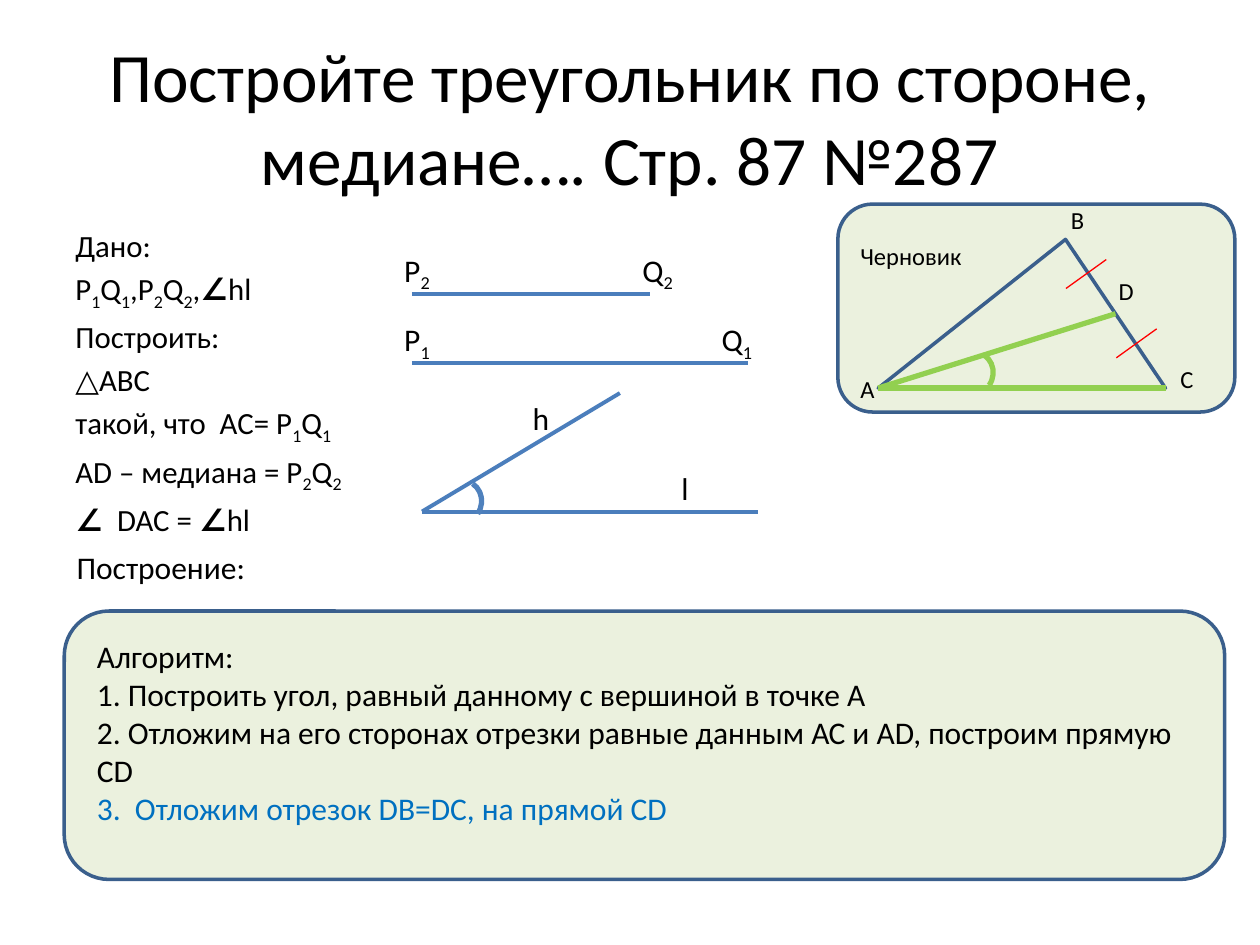
import collections
import itertools

import pptx
import pptx.dml.color
import pptx.enum.shapes
import pptx.enum.text
import pptx.oxml.ns
import pptx.util
from lxml import etree
from pptx.util import Inches

COLORS = {
    "text": "000000",
    "accent": "0070C0",
    "panel": "EBF1DE",
    "outline": "3A5F8C",
    "segment": "4B7EBC",
    "arc": "4F81BD",
    "known": "92D050",
    "tick": "FF0000",
}
SUBSCRIPTS = {"₁": "1", "₂": "2"}
SYMBOLS = "∠△"
SHAPES = pptx.enum.shapes.MSO_SHAPE


class Box(collections.namedtuple("Box", "left top width height")):
    def inner(self, x, y, width, height):
        return Box(self.left + x, self.top + y, width, height)

    def point(self, x, y):
        return self.left + x, self.top + y

    def lengths(self):
        return [Inches(value) for value in self]


def rgb(name):
    return pptx.dml.color.RGBColor.from_string(COLORS[name])


def character_style(character):
    if character in SUBSCRIPTS:
        return "subscript"
    return "bold" if character in SYMBOLS else "plain"


def add_text(slide, box, text, size=18, color="text", second_color="accent",
             align="LEFT", anchor="TOP", spacing=0, wrap=True):
    frame = slide.shapes.add_textbox(*box.lengths()).text_frame
    frame.word_wrap = wrap
    frame.vertical_anchor = pptx.enum.text.MSO_ANCHOR[anchor]
    lines = [text] if isinstance(text, str) else text
    for index, line in enumerate(lines):
        paragraph = frame.add_paragraph() if index else frame.paragraphs[0]
        paragraph.alignment = pptx.enum.text.PP_ALIGN[align]
        paragraph.space_before = pptx.util.Pt(size * spacing)
        for position, row in enumerate(line.split("\n")):
            if position:
                paragraph.add_line_break()
            for style, characters in itertools.groupby(row, character_style):
                run = paragraph.add_run()
                run.text = "".join(SUBSCRIPTS.get(c, c) for c in characters)
                run.font.name = "Calibri"
                run.font.size = pptx.util.Pt(size)
                run.font.color.rgb = rgb(second_color if position else color)
                run.font.bold = style == "bold"
                if style == "subscript":
                    run.font._element.set("baseline", "-25000")


def add_outline(slide, kind, box, line, weight, fill=None, rotation=0):
    shape = slide.shapes.add_shape(kind, *box.lengths())
    shape.shadow.inherit = False
    shape.rotation = rotation
    shape.line.color.rgb = rgb(line)
    shape.line.width = pptx.util.Pt(weight)
    if fill:
        shape.fill.solid()
        shape.fill.fore_color.rgb = rgb(fill)
    else:
        shape.fill.background()
    return shape


def add_panel(slide, box):
    add_outline(slide, SHAPES.ROUNDED_RECTANGLE, box, "outline", 2, fill="panel")


def add_angle_arc(slide, box, color):
    add_outline(slide, SHAPES.ARC, box, color, 3, rotation=34.1)


def add_line(slide, start, end, color, weight):
    connector = slide.shapes.add_connector(
        pptx.enum.shapes.MSO_CONNECTOR.STRAIGHT,
        *[Inches(value) for value in start + end])
    connector.line.color.rgb = rgb(color)
    connector.line.width = pptx.util.Pt(weight)
    etree.SubElement(connector._element.spPr, pptx.oxml.ns.qn("a:effectLst"))


def build_title(slide, box):
    add_text(slide, box, "Постройте треугольник по стороне, медиане…. Стр. 87 №287",
             size=39.6, align="CENTER", anchor="MIDDLE")


def build_given(slide, box):
    add_text(slide, box, [
        "Дано:",
        "P₁Q₁,P₂Q₂,∠hl",
        "Построить:",
        "△ABC",
        "такой, что  AC= P₁Q₁",
        "AD – медиана = P₂Q₂",
        "∠  DAC = ∠hl",
    ], size=17.6, spacing=0.2)
    add_text(slide, box.inner(0.01, 2.55, 2.44, 0.4), "Построение:")


def build_draft(slide, box):
    add_panel(slide, box)
    base_left, base_width, height, apex, top = 0.32, 2.28, 1.18, 0.652, 0.28
    triangle = add_outline(slide, SHAPES.ISOSCELES_TRIANGLE,
                           box.inner(base_left, top, base_width, height), "outline", 2)
    triangle.adjustments[0] = apex
    point_a = box.point(base_left, top + height)
    point_c = box.point(base_left + base_width, top + height)
    point_d = box.point(base_left + base_width * (1 + apex) / 2, top + height / 2)
    for end in (point_d, point_c):
        add_line(slide, point_a, end, "known", 3)
    for x, y in ((1.81, 0.67), (2.21, 1.22)):
        add_line(slide, box.point(x + 0.32, y - 0.23), box.point(x, y), "tick", 0.75)
    add_angle_arc(slide, box.inner(0.9, 1.17, 0.33, 0.35), "known")
    for label, x, y, width in (
        ("A", 0.08, 1.3, 0.54),
        ("B", 1.75, -0.04, 0.54),
        ("C", 2.62, 1.22, 0.54),
        ("D", 2.13, 0.52, 0.54),
        ("Черновик", 0.08, 0.24, 1.09),
    ):
        add_text(slide, box.inner(x, y, width, 0.55), label, size=14, spacing=0.2)


def build_known_parts(slide, box):
    for index, y, length, label_x in (("₂", 0, 1.89, 1.89), ("₁", 0.55, 2.67, 2.52)):
        add_line(slide, box.point(0.16, y + 0.39), box.point(0.16 + length, y + 0.39),
                 "segment", 2.25)
        add_text(slide, box.inner(0, y, 0.42, 0.4), "P" + index, wrap=False)
        add_text(slide, box.inner(label_x, y, 0.46, 0.4), "Q" + index, wrap=False)
    vertex = box.point(0.24, 2.12)
    for end in ((2.91, 2.12), (1.81, 1.18)):
        add_line(slide, vertex, box.point(*end), "segment", 2.25)
    add_text(slide, box.inner(1.02, 1.18, 0.34, 0.4), "h", wrap=False)
    add_text(slide, box.inner(2.2, 1.73, 0.26, 0.4), "l", wrap=False)
    add_angle_arc(slide, box.inner(0.38, 1.87, 0.33, 0.35), "arc")


def build_algorithm(slide, box):
    add_panel(slide, box)
    add_text(slide, box.inner(0.16, 0.16, 8.82, 1.62), [
        "Алгоритм:",
        "1. Построить угол, равный данному с вершиной в точке А",
        "2. Отложим на его сторонах отрезки равные данным АС и АD, построим прямую СD\n"
        "3.  Отложим отрезок DB=DC, на прямой CD",
    ])


def main():
    presentation = pptx.Presentation()
    presentation.slide_width = Inches(10)
    presentation.slide_height = Inches(7.5)
    slide = presentation.slides.add_slide(presentation.slide_layouts[6])
    build_draft(slide, Box(6.65, 1.62, 3.15, 1.65))
    build_title(slide, Box(0.5, 0.3, 9, 1.25))
    build_given(slide, Box(0.5, 1.75, 2.61, 2.47))
    build_known_parts(slide, Box(3.11, 1.94, 2.98, 2.22))
    build_algorithm(slide, Box(0.51, 4.85, 9.21, 2.13))
    presentation.save("out.pptx")


if __name__ == "__main__":
    main()
